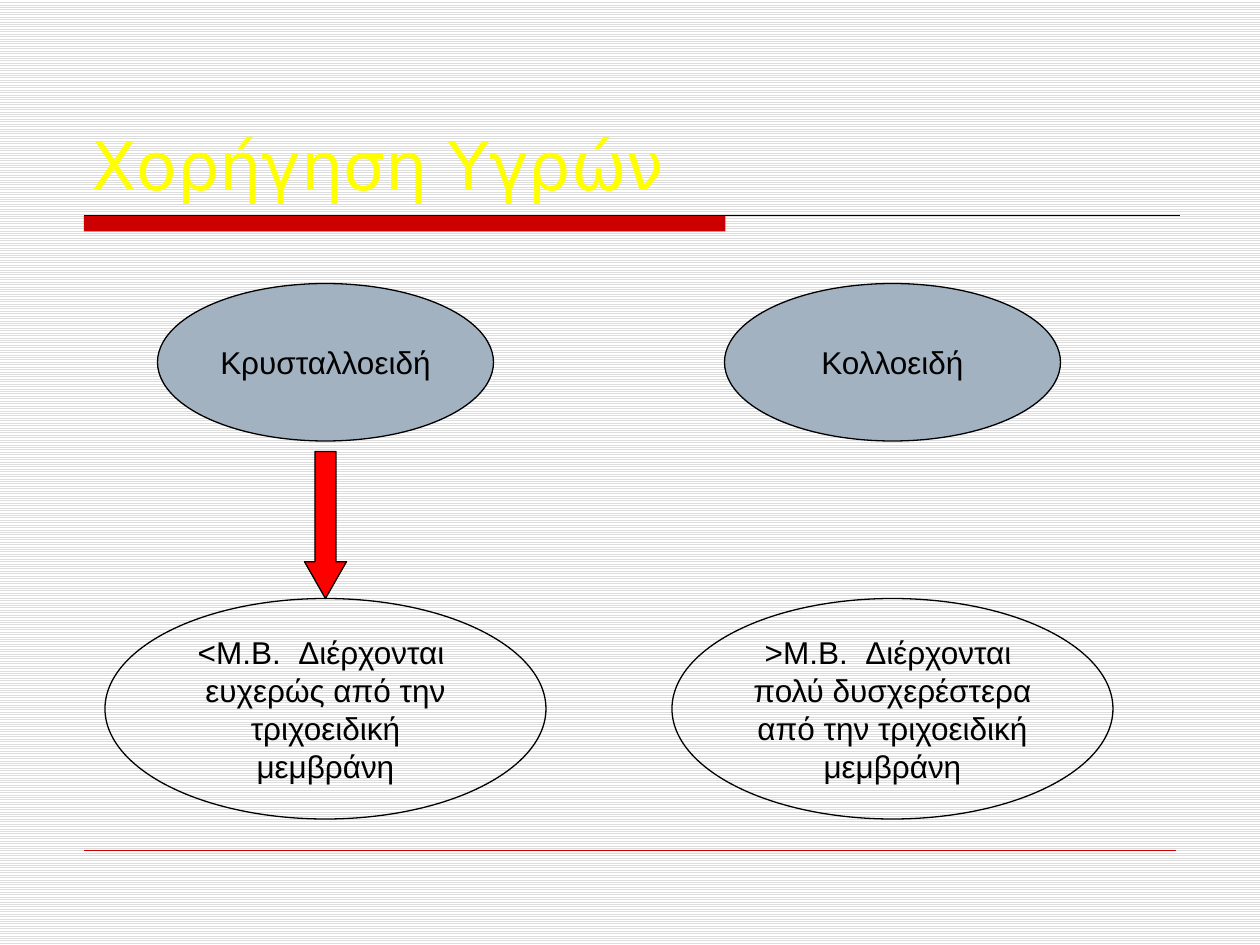
from pptx import Presentation
from pptx.dml.color import RGBColor
from pptx.enum import dml, shapes, text
from pptx.oxml.ns import qn
from pptx.util import Pt
from lxml import etree


def colour(hex_code):
    return RGBColor.from_string(hex_code)


def format_text(frame, size, font, hex_code, align):
    for paragraph in frame.paragraphs:
        paragraph.alignment = align
        for run in paragraph.runs:
            run.font.size = Pt(size)
            run.font.name = font
            run.font.color.rgb = colour(hex_code)


def add_block(slide, kind, left, top, width, height, fill=None, line="000000"):
    block = slide.shapes.add_shape(kind, Pt(left), Pt(top), Pt(width), Pt(height))
    block.shadow.inherit = False
    if fill:
        block.fill.solid()
        block.fill.fore_color.rgb = colour(fill)
    else:
        block.fill.background()
    if line:
        block.line.color.rgb = colour(line)
        block.line.width = Pt(0.75)
    else:
        block.line.fill.background()
    return block


def add_rule(slide, left, top, width, hex_code, weight):
    rule = slide.shapes.add_connector(
        shapes.MSO_CONNECTOR.STRAIGHT, Pt(left), Pt(top), Pt(left + width), Pt(top))
    rule.line.color.rgb = colour(hex_code)
    rule.line.width = Pt(weight)
    etree.SubElement(rule._element.spPr, qn("a:effectLst"))


def add_oval(slide, left, top, width, height, label, fill=None, wrap=True):
    oval = add_block(slide, shapes.MSO_SHAPE.OVAL, left, top, width, height, fill)
    frame = oval.text_frame
    frame.text = label
    frame.word_wrap = wrap
    frame.vertical_anchor = text.MSO_ANCHOR.MIDDLE
    format_text(frame, 18, "Arial", "000000", text.PP_ALIGN.CENTER)


def add_heading(slide, left, top, width, height, heading):
    title = slide.shapes.title
    title.left, title.top, title.width, title.height = map(Pt, (left, top, width, height))
    frame = title.text_frame
    frame.text = heading
    frame.word_wrap = True
    frame.auto_size = text.MSO_AUTO_SIZE.NONE
    frame.vertical_anchor = text.MSO_ANCHOR.BOTTOM
    format_text(frame, 38, "DejaVu Sans", "FFFF00", text.PP_ALIGN.LEFT)

    rule_left, rule_top = left + 3, top + height + 3.2
    add_block(slide, shapes.MSO_SHAPE.RECTANGLE, rule_left, rule_top, 366.5, 9,
              "CC0000", line=None)
    add_rule(slide, rule_left, rule_top, 626.5, "000000", 0.75)


def add_fluid(slide, left, top, width, fluid, property_text, arrow=False):
    centre = left + width / 2
    add_oval(slide, centre - 96, top, 192, 90, fluid, "A3B2C1", wrap=False)
    add_oval(slide, left, top + 180, width, 126, property_text)
    if arrow:
        down = add_block(slide, shapes.MSO_SHAPE.DOWN_ARROW,
                         centre - 12, top + 96, 24, 84, "FF0000")
        down.adjustments[0] = 0.5
        down.adjustments[1] = 0.875


def main():
    deck = Presentation()
    deck.slide_width, deck.slide_height = Pt(720), Pt(540)
    slide = deck.slides.add_slide(deck.slide_layouts[5])

    backdrop = slide.background.fill
    backdrop.patterned()
    backdrop.pattern = dml.MSO_PATTERN.LIGHT_HORIZONTAL
    backdrop.fore_color.rgb = colour("DDDDDD")
    backdrop.back_color.rgb = colour("FFFFFF")

    add_heading(slide, 45, 24, 630, 96, "Χορήγηση Υγρών")
    add_rule(slide, 48, 486, 624, "CC0000", 0.25)

    fluids = [
        ("Κρυσταλλοειδή",
         "<M.B.  Διέρχονται  ευχερώς από την τριχοειδική μεμβράνη", True),
        ("Κολλοειδή",
         ">M.B.  Διέρχονται  πολύ δυσχερέστερα από την τριχοειδική μεμβράνη", False),
    ]
    for column, (fluid, property_text, arrow) in enumerate(fluids):
        add_fluid(slide, 60 + 324 * column, 162, 252, fluid, property_text, arrow)

    deck.save("out.pptx")


if __name__ == "__main__":
    main()
